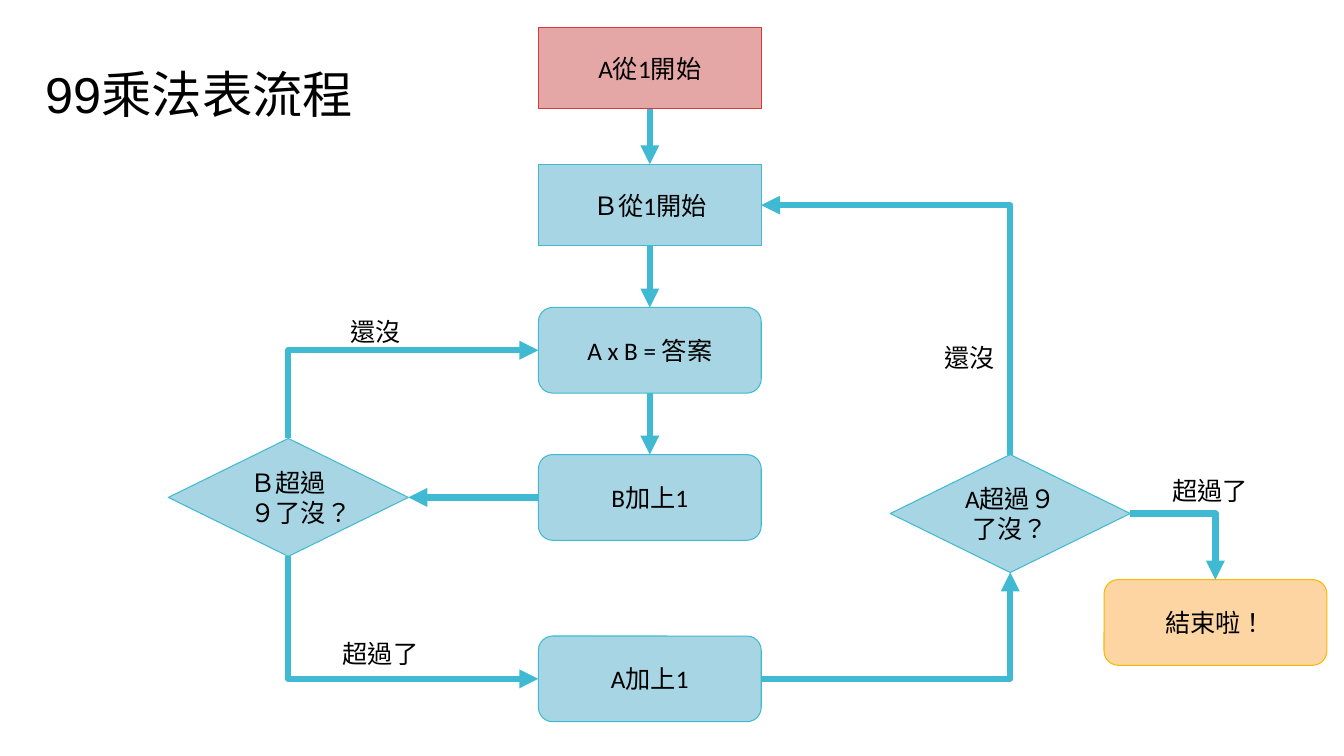
from lxml import etree
from pptx import Presentation
from pptx.dml.color import RGBColor
from pptx.enum.lang import MSO_LANGUAGE_ID
from pptx.enum.shapes import MSO_CONNECTOR, MSO_SHAPE
from pptx.enum.text import MSO_ANCHOR, MSO_AUTO_SIZE, PP_ALIGN
from pptx.oxml.ns import qn
from pptx.util import Inches, Pt

RECTANGLE, ROUNDED = MSO_SHAPE.RECTANGLE, MSO_SHAPE.ROUNDED_RECTANGLE
DIAMOND = MSO_SHAPE.DIAMOND
STRAIGHT, ELBOW = MSO_CONNECTOR.STRAIGHT, MSO_CONNECTOR.ELBOW
MIDDLE, CENTER = MSO_ANCHOR.MIDDLE, PP_ALIGN.CENTER
GROW = MSO_AUTO_SIZE.SHAPE_TO_FIT_TEXT
CHINESE = MSO_LANGUAGE_ID.TRADITIONAL_CHINESE

BLACK = RGBColor(0x00, 0x00, 0x00)
RED, RED_LINE = RGBColor(0xE5, 0xA6, 0xA6), RGBColor(0xD5, 0x39, 0x3D)
BLUE, BLUE_LINE = RGBColor(0xA7, 0xD5, 0xE3), RGBColor(0x40, 0xBA, 0xD2)
ORANGE, ORANGE_LINE = RGBColor(0xFC, 0xD5, 0xA2), RGBColor(0xFA, 0xB9, 0x00)

# Connection sites shared by all the step shapes
TOP, LEFT, BOTTOM, RIGHT = range(4)
SIZES = {RECTANGLE: (2.21, 0.81), ROUNDED: (2.21, 0.85), DIAMOND: (2.38, 1.17)}
MAIN_COLUMN = 5.34


def add_run(paragraph, text, size=18, name="Calibri"):
    run = paragraph.add_run()
    run.text = text
    text_format = {"size": Pt(size), "name": name, "language_id": CHINESE}
    for attribute, value in text_format.items():
        setattr(run.font, attribute, value)
    run.font.color.rgb = BLACK


def add_text_box(left, top, width, height, runs):
    frame = slide.shapes.add_textbox(
        Inches(left), Inches(top), Inches(width), Inches(height)).text_frame
    for attribute, value in {"word_wrap": True, "auto_size": GROW}.items():
        setattr(frame, attribute, value)
    for run in runs:
        add_run(frame.paragraphs[0], *run)


presentation = Presentation()
presentation.slide_width = Inches(13.33)
presentation.slide_height = Inches(7.5)
slide = presentation.slides.add_slide(presentation.slide_layouts[6])

# Title
add_text_box(0.35, 0.58, 3.29, 0.71, [("99", 36, "Arial"), ("乘法表流程", 36)])

# Steps of the flow
steps = {
    "start A": (RECTANGLE, MAIN_COLUMN, 0.27, "A從1開始", RED, RED_LINE),
    "start B": (RECTANGLE, MAIN_COLUMN, 1.63, "Ｂ從1開始", BLUE, BLUE_LINE),
    "multiply": (ROUNDED, MAIN_COLUMN, 3.05, "A x B = 答案", BLUE, BLUE_LINE),
    "next B": (ROUNDED, MAIN_COLUMN, 4.51, "B加上1", BLUE, BLUE_LINE),
    "check B": (DIAMOND, 1.67, 4.35, "Ｂ超過９了沒？", BLUE, BLUE_LINE),
    "next A": (ROUNDED, MAIN_COLUMN, 6.31, "A加上1", BLUE, BLUE_LINE),
    "check A": (DIAMOND, 8.83, 4.51, "A超過９了沒？", BLUE, BLUE_LINE),
    "end": (ROUNDED, 10.95, 5.75, "結束啦！", ORANGE, ORANGE_LINE),
}
shapes = {}
for step, (kind, left, top, text, fill, line) in steps.items():
    width, height = SIZES[kind]
    shape = slide.shapes.add_shape(
        kind, Inches(left), Inches(top), Inches(width), Inches(height))
    shape.shadow.inherit = False
    shape.fill.solid()
    shape.fill.fore_color.rgb = fill
    shape.line.color.rgb = line
    shape.line.width = Pt(0.75)
    shape.text_frame.vertical_anchor = MIDDLE
    paragraph = shape.text_frame.paragraphs[0]
    paragraph.alignment = CENTER
    add_run(paragraph, text)
    shapes[step] = shape

# Arrows: elbows leave their first shape sideways, so those that point
# at a side begin at the arrowhead
arrows = [
    (STRAIGHT, "start A", BOTTOM, "start B", TOP, "tailEnd"),
    (STRAIGHT, "start B", BOTTOM, "multiply", TOP, "tailEnd"),
    (STRAIGHT, "multiply", BOTTOM, "next B", TOP, "tailEnd"),
    (STRAIGHT, "next B", LEFT, "check B", RIGHT, "tailEnd"),
    (ELBOW, "multiply", LEFT, "check B", TOP, "headEnd"),
    (ELBOW, "next A", LEFT, "check B", BOTTOM, "headEnd"),
    (ELBOW, "next A", RIGHT, "check A", BOTTOM, "tailEnd"),
    (ELBOW, "start B", RIGHT, "check A", TOP, "headEnd"),
    (ELBOW, "check A", RIGHT, "end", TOP, "tailEnd"),
]
for kind, first, first_site, second, second_site, arrow_end in arrows:
    connector = slide.shapes.add_connector(kind, 0, 0, 0, 0)
    connector.begin_connect(shapes[first], first_site)
    connector.end_connect(shapes[second], second_site)
    connector.line.color.rgb = BLUE_LINE
    connector.line.width = Pt(4.5)
    properties = connector._element.spPr
    if kind == ELBOW:
        properties.find(qn("a:prstGeom")).set("prst", "bentConnector2")
    outline = properties.find(qn("a:ln"))
    etree.SubElement(outline, qn(f"a:{arrow_end}"), type="triangle")
    etree.SubElement(properties, qn("a:effectLst"))

# Branch labels
for left, top, text in [(3.38, 3.09, "還沒"), (3.3, 6.28, "超過了"),
                        (9.27, 3.35, "還沒"), (11.53, 4.67, "超過了")]:
    add_text_box(left, top, 0.97, 0.4, [(text,)])

presentation.save("out.pptx")
